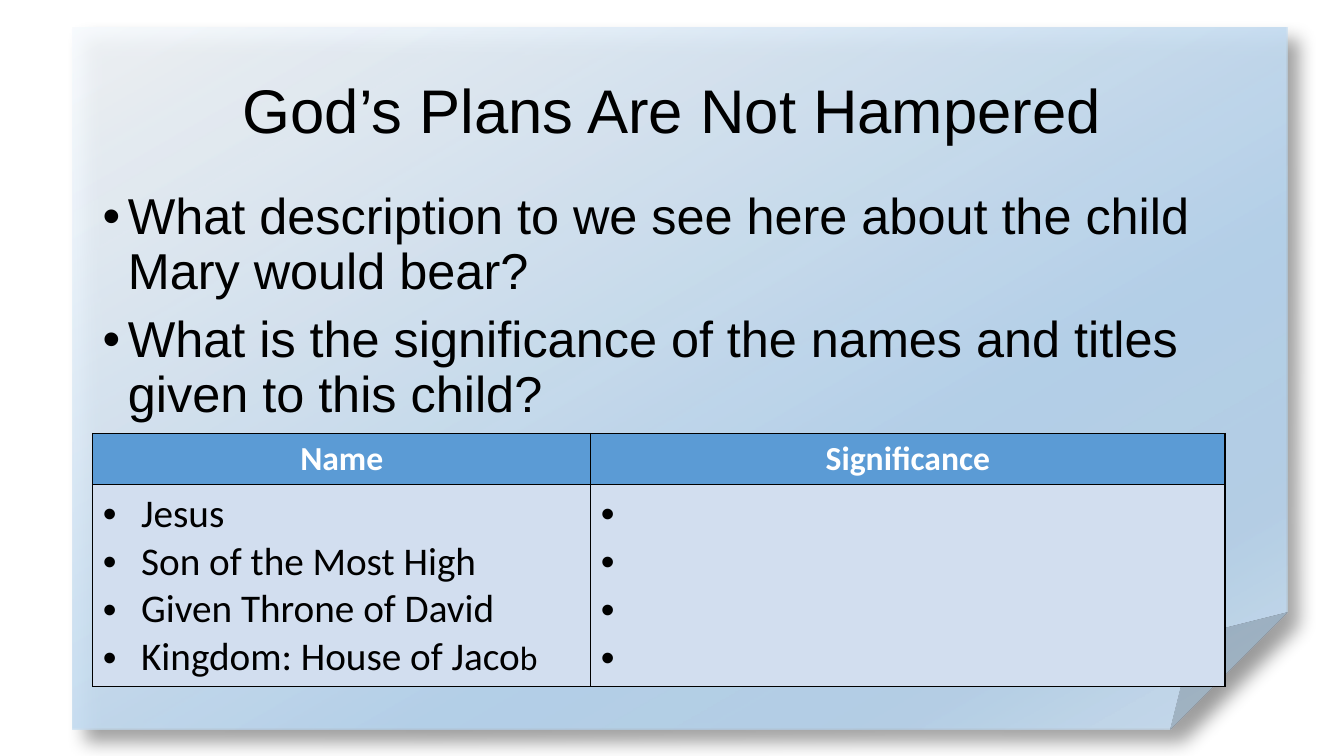
from lxml import etree
from pptx import Presentation
from pptx.dml.color import RGBColor
from pptx.enum.shapes import MSO_SHAPE
from pptx.enum.text import MSO_ANCHOR, PP_ALIGN
from pptx.oxml import parse_xml
from pptx.oxml.ns import nsdecls, qn
from pptx.util import Inches, Pt

BLACK = RGBColor(0x00, 0x00, 0x00)
WHITE = RGBColor(0xFF, 0xFF, 0xFF)
HEADER_BLUE = RGBColor(0x5B, 0x9B, 0xD5)
CELL_BLUE = RGBColor(0xD2, 0xDE, 0xEF)
PAPER_LIGHT = RGBColor(0xF7, 0xFA, 0xFD)
PAPER_BLUE = RGBColor(0xB5, 0xD2, 0xEC)
PAPER_END = RGBColor(0xCE, 0xE1, 0xF2)


def add_run(p, text, size, color, name, bold=False):
    r = p.add_run()
    r.text = text
    r.font.size = Pt(size)
    r.font.color.rgb = color
    r.font.name = name
    r.font.bold = bold


def set_bullet(p, indent):
    pPr = p._p.get_or_add_pPr()
    pPr.set("marL", str(Inches(indent)))
    pPr.set("indent", str(-Inches(indent)))
    etree.SubElement(pPr, qn("a:buFont")).set("typeface", "Arial")
    etree.SubElement(pPr, qn("a:buChar")).set("char", "•")


prs = Presentation()
prs.slide_width = Inches(13.33)
prs.slide_height = Inches(7.5)
s = prs.slides.add_slide(prs.slide_layouts[6])

paper = s.shapes.add_shape(MSO_SHAPE.FOLDED_CORNER, Inches(0.72), Inches(0.27),
                           Inches(12.05), Inches(6.97))
paper.line.fill.background()
paper.fill.gradient()
paper.fill.gradient_angle = 300
spPr = paper._element.spPr
stops = spPr.find(qn("a:gradFill")).find(qn("a:gsLst"))
for stop in list(stops):
    stops.remove(stop)
for pos, color, alpha in [(0, PAPER_LIGHT, 87), (64, PAPER_BLUE, 94),
                          (83, PAPER_BLUE, 89), (100, PAPER_END, 91)]:
    stops.append(parse_xml(
        f'<a:gs {nsdecls("a")} pos="{pos * 1000}"><a:srgbClr val="{color}">'
        f'<a:alpha val="{alpha * 1000}"/></a:srgbClr></a:gs>'))
spPr.append(parse_xml(
    f'<a:effectLst {nsdecls("a")}><a:outerShdw blurRad="{Pt(13)}" dist="{Pt(13)}" '
    f'dir="{45 * 60000}" algn="tl" rotWithShape="0"><a:srgbClr val="{BLACK}">'
    '<a:alpha val="40000"/></a:srgbClr></a:outerShdw></a:effectLst>'))

title = s.shapes.add_textbox(Inches(0.92), Inches(0.4), Inches(11.5), Inches(1.45))
tf = title.text_frame
tf.word_wrap = True
tf.vertical_anchor = MSO_ANCHOR.MIDDLE
p = tf.paragraphs[0]
p.alignment = PP_ALIGN.CENTER
p.line_spacing = 0.9
add_run(p, "God’s Plans Are Not Hampered", 44, BLACK, "Arial")

body = s.shapes.add_textbox(Inches(0.92), Inches(1.85), Inches(11.5), Inches(4.91))
tf = body.text_frame
tf.word_wrap = True
questions = ["What description to we see here about the child Mary would bear?",
             "What is the significance of the names and titles given to this child?"]
for i, question in enumerate(questions):
    p = tf.add_paragraph() if i else tf.paragraphs[0]
    set_bullet(p, 0.25)
    p.line_spacing = 0.9
    if i:
        p.space_before = Pt(10)
    add_run(p, question, 36, BLACK, "Arial")

table = s.shapes.add_table(2, 2, Inches(0.92), Inches(4.3), Inches(11.23), Inches(2.51)).table
table.columns[0].width = Inches(4.94)
table.columns[1].width = Inches(6.29)
table.rows[0].height = Inches(0.51)
table.rows[1].height = Inches(2)

for col, heading in enumerate(["Name", "Significance"]):
    p = table.cell(0, col).text_frame.paragraphs[0]
    p.alignment = PP_ALIGN.CENTER
    add_run(p, heading, 24, WHITE, "Calibri", True)

names = [[("Jesus", 28)], [("Son of the Most High", 28)], [("Given Throne of David", 28)],
         [("Kingdom: House of Jaco", 28), ("b", 24)]]
answers = [[(" ", 28)]] * len(names)
for col, items in enumerate([names, answers]):
    tf = table.cell(1, col).text_frame
    for i, runs in enumerate(items):
        p = tf.add_paragraph() if i else tf.paragraphs[0]
        set_bullet(p, 0.38)
        for text, size in runs:
            add_run(p, text, size, BLACK, "Calibri")

for row, color in enumerate([HEADER_BLUE, CELL_BLUE]):
    for cell in table.rows[row].cells:
        cell.fill.solid()
        cell.fill.fore_color.rgb = color
        tcPr = cell._tc.get_or_add_tcPr()
        for i, side in enumerate(["lnL", "lnR", "lnT", "lnB"]):
            tcPr.insert(i, parse_xml(
                f'<a:{side} {nsdecls("a")} w="{Pt(1)}"><a:solidFill>'
                f'<a:srgbClr val="{BLACK}"/></a:solidFill></a:{side}>'))

prs.save("out.pptx")
